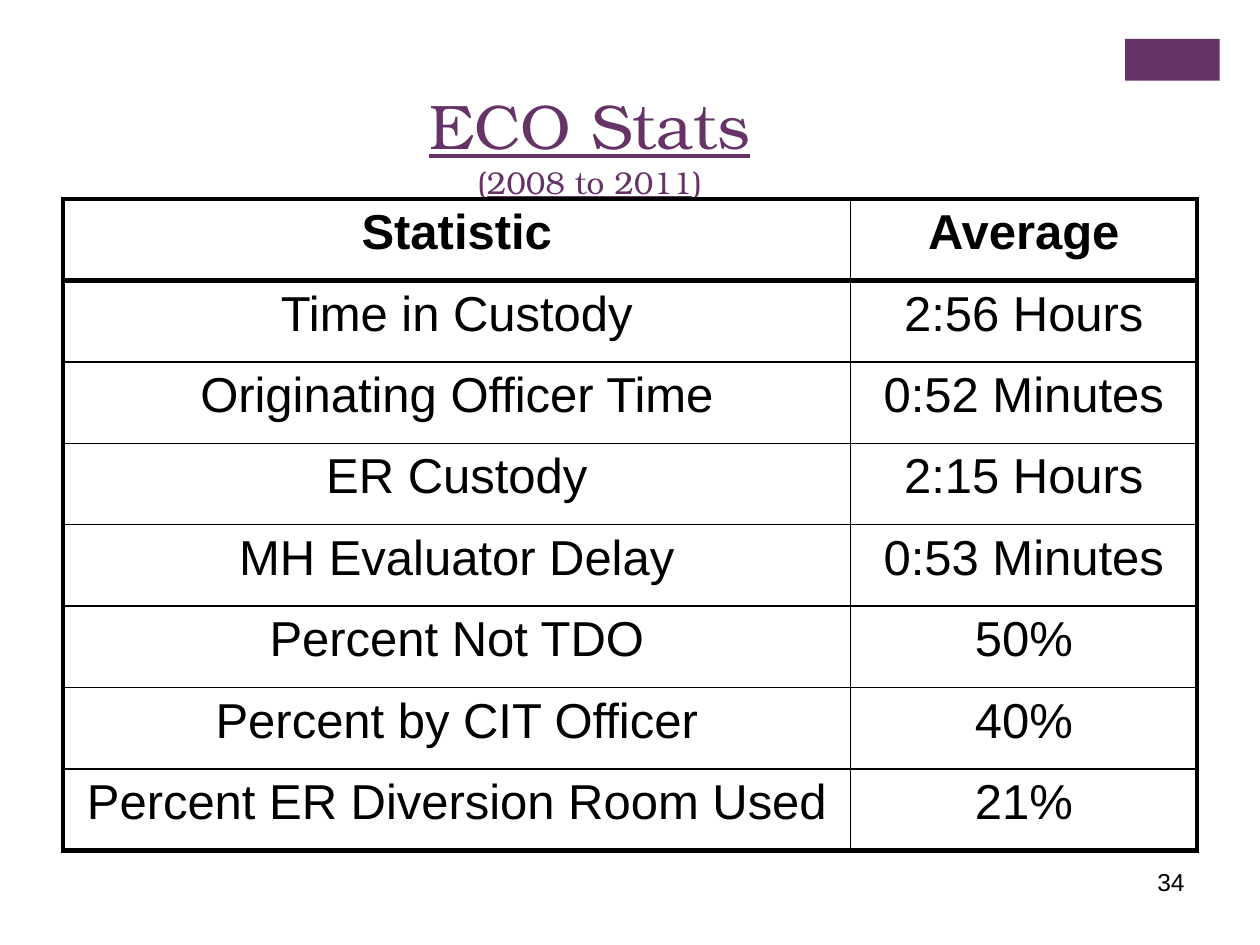
from dataclasses import dataclass

from lxml import etree
from pptx import Presentation
from pptx import util as u
from pptx.dml.color import RGBColor
from pptx.enum import shapes, text
from pptx.oxml.ns import qn


@dataclass(frozen=True)
class Theme:
    accent: str = "663366"
    ink: str = "000000"
    title_font: str = "TeX Gyre Bonum"
    body_font: str = "Arial"
    title_size: int = 36
    subtitle_size: int = 18
    table_size: int = 28
    number_size: int = 14
    thin: float = 1
    frame: float = 2.25
    heavy: float = 3


THEME = Theme()
TITLE = "ECO Stats"
SUBTITLE = [("(", False), ("2008 to 2011", True), (")", False)]
PAGE_NUMBER = "34"
STATS = [
    ("Statistic", "Average"),
    ("Time in Custody", "2:56 Hours"),
    ("Originating Officer Time", "0:52 Minutes"),
    ("ER Custody", "2:15 Hours"),
    ("MH Evaluator Delay", "0:53 Minutes"),
    ("Percent Not TDO", "50%"),
    ("Percent by CIT Officer", "40%"),
    ("Percent ER Diversion Room Used", "21%"),
]
COLUMN_WIDTHS = (6.25, 2.75)
TABLE_LEFT, TABLE_TOP, TABLE_HEIGHT = 0.5, 1.58, 5.17


def add_span(para, words, *, size, font=THEME.body_font, color=THEME.ink,
             bold=False, underline=False, align=text.PP_ALIGN.CENTER):
    para.alignment = align
    span = para.add_run()
    span.text = words
    span.font.size = u.Pt(size)
    span.font.name = font
    span.font.bold = bold
    span.font.underline = underline
    span.font.color.rgb = RGBColor.from_string(color)


def add_box(page, left, top, width, height, anchor):
    box = page.shapes.add_textbox(*map(u.Inches, (left, top, width, height)))
    box.text_frame.word_wrap = True
    box.text_frame.vertical_anchor = anchor
    return box.text_frame.paragraphs[0]


def set_borders(cell, widths):
    """Draw the left, right, top and bottom edges, ahead of the cell's fill."""
    properties = cell._tc.get_or_add_tcPr()
    for place, (side, width) in enumerate(zip("LRTB", widths)):
        line = etree.Element(qn(f"a:ln{side}"), w=str(u.Pt(width)))
        fill = etree.SubElement(line, qn("a:solidFill"))
        etree.SubElement(fill, qn("a:srgbClr"), val=THEME.ink)
        properties.insert(place, line)


def add_title(page):
    para = add_box(page, 0.55, 0.53, 8.26, 1.22, text.MSO_ANCHOR.MIDDLE)
    style = dict(font=THEME.title_font, color=THEME.accent)
    add_span(para, TITLE, size=THEME.title_size, underline=True, **style)
    para.add_line_break()
    for words, underline in SUBTITLE:
        add_span(para, words, size=THEME.subtitle_size, underline=underline, **style)


def add_stats_table(page):
    table = page.shapes.add_table(
        len(STATS), len(COLUMN_WIDTHS), u.Inches(TABLE_LEFT), u.Inches(TABLE_TOP),
        u.Inches(sum(COLUMN_WIDTHS)), u.Inches(TABLE_HEIGHT)).table
    table.horz_banding = False
    for column, width in zip(table.columns, COLUMN_WIDTHS):
        column.width = u.Inches(width)
    last_row, last_column = len(STATS) - 1, len(COLUMN_WIDTHS) - 1
    for r, row in enumerate(STATS):
        table.rows[r].height = u.Inches(TABLE_HEIGHT / len(STATS))
        for c, words in enumerate(row):
            cell = table.cell(r, c)
            cell.fill.background()
            add_span(cell.text_frame.paragraphs[0], words,
                     size=THEME.table_size, bold=r == 0)
            set_borders(cell, (
                THEME.frame if c == 0 else THEME.thin,
                THEME.frame if c == last_column else THEME.thin,
                {0: THEME.frame, 1: THEME.heavy}.get(r, THEME.thin),
                THEME.heavy if r in (0, last_row) else THEME.thin,
            ))


def main():
    deck = Presentation()
    deck.slide_width, deck.slide_height = u.Inches(10), u.Inches(7.5)
    page = deck.slides.add_slide(deck.slide_layouts[6])

    block = page.shapes.add_shape(
        shapes.MSO_SHAPE.RECTANGLE, *map(u.Inches, (8.93, 0.31, 0.75, 0.33)))
    block.shadow.inherit = False
    block.fill.solid()
    block.fill.fore_color.rgb = RGBColor.from_string(THEME.accent)
    block.line.fill.background()

    number = add_box(page, 7.17, 6.83, 2.33, 0.52, text.MSO_ANCHOR.TOP)
    add_span(number, PAGE_NUMBER, size=THEME.number_size, align=text.PP_ALIGN.RIGHT)
    add_title(page)
    add_stats_table(page)
    deck.save("out.pptx")


if __name__ == "__main__":
    main()
